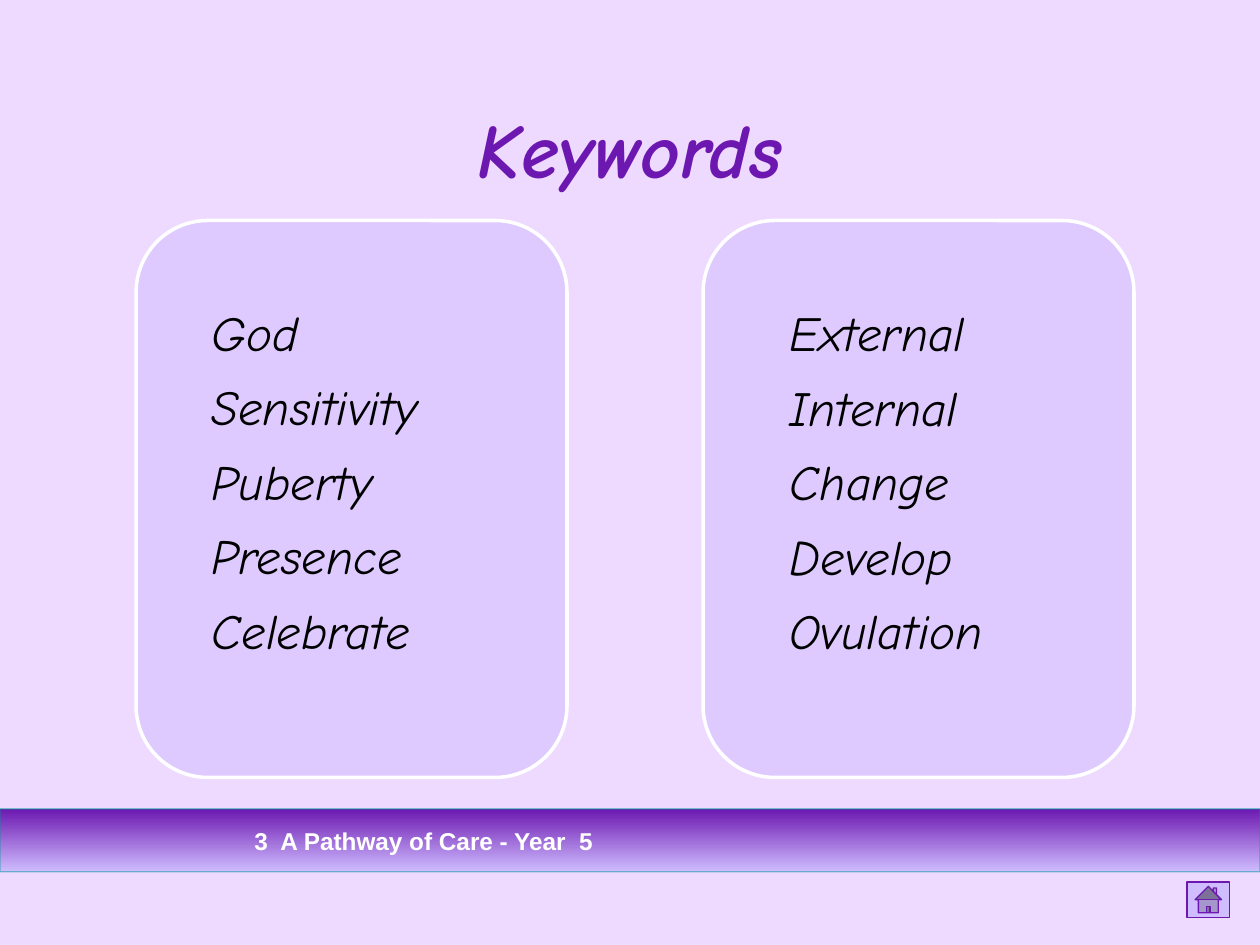
from pptx import Presentation
from pptx.dml.color import RGBColor
from pptx.enum.shapes import MSO_SHAPE
from pptx.enum.text import MSO_ANCHOR, PP_ALIGN
from pptx.oxml.ns import qn
from pptx.util import Inches, Pt
from lxml.etree import SubElement

TITLE = "Keywords"
FOOTER = "3  A Pathway of Care - Year  5"
COLUMNS = [
    {"panel": 1.08, "box": (1.58, 1.83, 3.25, 3.92),
     "words": ["God", "Sensitivity", "Puberty", "Presence", "Celebrate"]},
    {"panel": 5.58, "box": (6.17, 1.67, 2.33, 4.25),
     "words": ["External", "Internal", "Change", "Develop", "Ovulation"]},
]
PURPLE, LILAC, PALE = "6C18B0", "CFBDFF", "EED9FF"
WHITE, BLACK, TEAL = "FFFFFF", "000000", "009999"


def paint(color, value):
    color.rgb = RGBColor.from_string(value)


def set_font(font, name, size, color, bold=False, italic=False):
    font.name, font.size = name, Pt(size)
    font.bold, font.italic = bold, italic
    paint(font.color, color)


def fade(shape, target):
    for color in shape._element.spPr.xpath(target + "a:solidFill/a:srgbClr"):
        SubElement(color, qn("a:alpha")).set("val", "50000")


def add_block(slide, preset, box, line_color, line_width, fill=LILAC):
    block = slide.shapes.add_shape(preset, *map(Inches, box))
    block.shadow.inherit = False
    if fill:
        block.fill.solid()
        paint(block.fill.fore_color, fill)
    paint(block.line.color, line_color)
    block.line.width = Pt(line_width)
    return block


def add_text(slide, box, lines):
    frame = slide.shapes.add_textbox(*map(Inches, box)).text_frame
    frame.word_wrap = True
    frame.text = "\n".join(lines)
    return frame


deck = Presentation()
deck.slide_width, deck.slide_height = Inches(10), Inches(7.5)
slide = deck.slides.add_slide(deck.slide_layouts[5])
slide.background.fill.solid()
paint(slide.background.fill.fore_color, PALE)

heading = slide.shapes.title
heading.left, heading.top, heading.width, heading.height = map(Inches, (0.5, 0.42, 9, 1.5))
heading.text_frame.text = TITLE
heading.text_frame.vertical_anchor = MSO_ANCHOR.MIDDLE
heading_line = heading.text_frame.paragraphs[0]
heading_line.alignment = PP_ALIGN.CENTER
set_font(heading_line.font, "Comic Neue", 44, PURPLE, bold=True, italic=True)

for column in COLUMNS:
    panel = add_block(slide, MSO_SHAPE.ROUNDED_RECTANGLE,
                      (column["panel"], 1.75, 3.42, 4.42), WHITE, 2)
    fade(panel, "./")
    words = add_text(slide, column["box"], column["words"])
    words.vertical_anchor = MSO_ANCHOR.MIDDLE
    for word in words.paragraphs:
        word.line_spacing, word.space_before = 1.1, Pt(5.6)
        set_font(word.font, "Comic Neue", 28, BLACK, italic=True)

band = add_block(slide, MSO_SHAPE.RECTANGLE, (0, 6.42, 10, 0.5), TEAL, 0.75, fill=None)
fade(band, "./a:ln/")
band.fill.gradient()
band.fill.gradient_angle = 270
for stop, color in zip(band.fill.gradient_stops, (PURPLE, LILAC)):
    paint(stop.color, color)

footer_line = add_text(slide, (1.92, 6.47, 6.25, 0.37), [FOOTER]).paragraphs[0]
set_font(footer_line.font, "Arial", 24, WHITE, bold=True)
footer_line.runs[0]._r.get_or_add_rPr().set("baseline", "30000")

add_block(slide, MSO_SHAPE.ACTION_BUTTON_HOME, (9.42, 7, 0.34, 0.28), PURPLE, 0.75)

deck.save("out.pptx")
